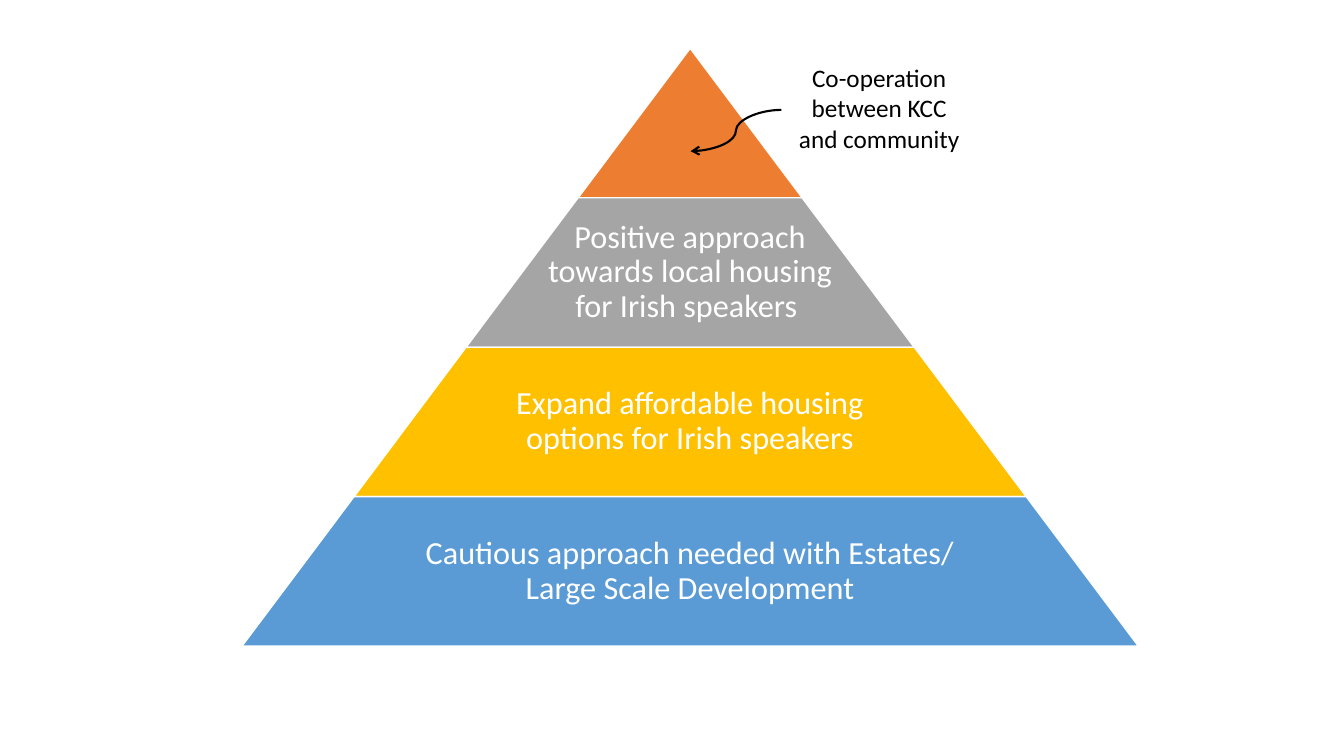
from lxml import etree
from pptx import Presentation
from pptx.dml.color import RGBColor
from pptx.enum import shapes, text
from pptx.oxml.ns import qn
from pptx.util import Inches, Pt

FONT = "Calibri"
TIERS = [  # fill and label, from the top down
    ("ED7D31", ""),
    ("A5A5A5", "Positive approach towards local housing for Irish speakers "),
    ("FFC000", "Expand affordable housing options for Irish speakers"),
    ("5B9BD5", "Cautious approach needed with Estates/ Large Scale Development"),
]
LABEL_SHARE = 0.65  # label width as a share of its tier


def color(value):
    return RGBColor.from_string(value)


def add_label(page, box, words, size, ink):
    label = page.shapes.add_textbox(*map(Inches, box))
    frame = label.text_frame
    frame.word_wrap = True
    para = frame.paragraphs[0]
    para.alignment = text.PP_ALIGN.CENTER
    span = para.add_run()
    span.text = words
    span.font.name = FONT
    span.font.size = Pt(size)
    span.font.color.rgb = color(ink)
    return frame


def add_pyramid(page, box):
    left, top, width, height = box
    tier_height = height / len(TIERS)
    center = left + width / 2
    for index, (fill, words) in enumerate(TIERS):
        tier_width = width * (index + 1) / len(TIERS)
        tier_top = top + index * tier_height
        tier = page.shapes.add_shape(
            shapes.MSO_SHAPE.TRAPEZOID,
            *map(Inches, (center - tier_width / 2, tier_top, tier_width, tier_height)))
        tier.adjustments[0] = width / 2 / height
        tier.shadow.inherit = False
        tier.fill.solid()
        tier.fill.fore_color.rgb = color(fill)
        tier.line.color.rgb = color("FFFFFF")
        tier.line.width = Pt(1)
        if not words:
            continue
        label_width = tier_width * LABEL_SHARE
        frame = add_label(
            page, (center - label_width / 2, tier_top, label_width, tier_height),
            words, 23, "FFFFFF")
        frame.vertical_anchor = text.MSO_ANCHOR.MIDDLE
        frame.margin_left = frame.margin_right = Inches(0.03)
        frame.margin_top = frame.margin_bottom = Inches(0.03)
        frame.paragraphs[0].line_spacing = 0.9


def add_callout(page, box, target):
    left, top, width, height = box
    frame = add_label(page, box, "Co-operation between KCC and community", 18, "000000")
    frame.auto_size = text.MSO_AUTO_SIZE.SHAPE_TO_FIT_TEXT

    # Curved arrow from the middle of the left edge to the target
    arrow = page.shapes.add_connector(
        shapes.MSO_CONNECTOR.CURVE,
        *map(Inches, (left, top + height / 2, *target)))
    arrow.line.color.rgb = color("000000")
    arrow.line.width = Pt(1.5)
    etree.SubElement(arrow.line._get_or_add_ln(), qn("a:tailEnd"), type="arrow")
    etree.SubElement(arrow._element.spPr, qn("a:effectLst"))


def main():
    deck = Presentation()
    deck.slide_width, deck.slide_height = Inches(13.33), Inches(7.5)
    page = deck.slides.add_slide(deck.slide_layouts[6])
    add_pyramid(page, (2.4, 0.48, 8.89, 5.93))
    add_callout(page, (7.75, 0.57, 1.94, 1.04), (6.85, 1.5))
    deck.save("out.pptx")


if __name__ == "__main__":
    main()
